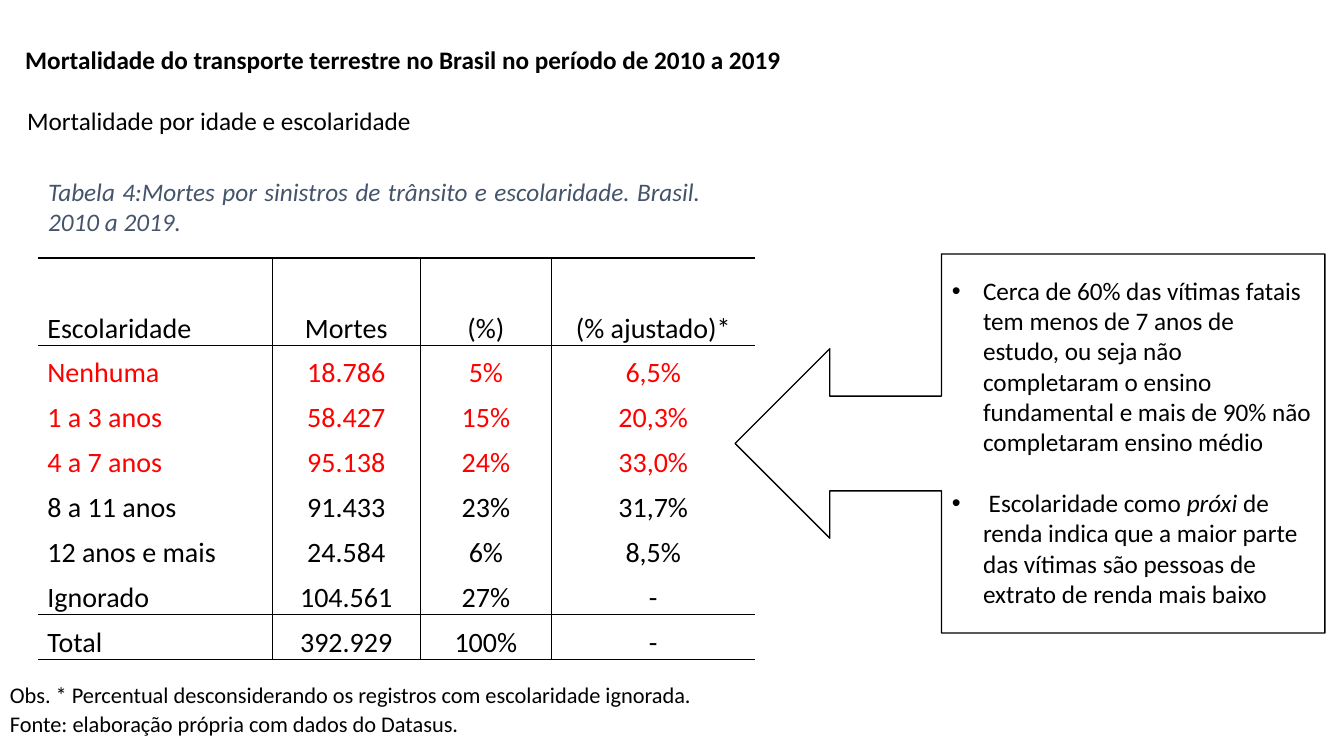
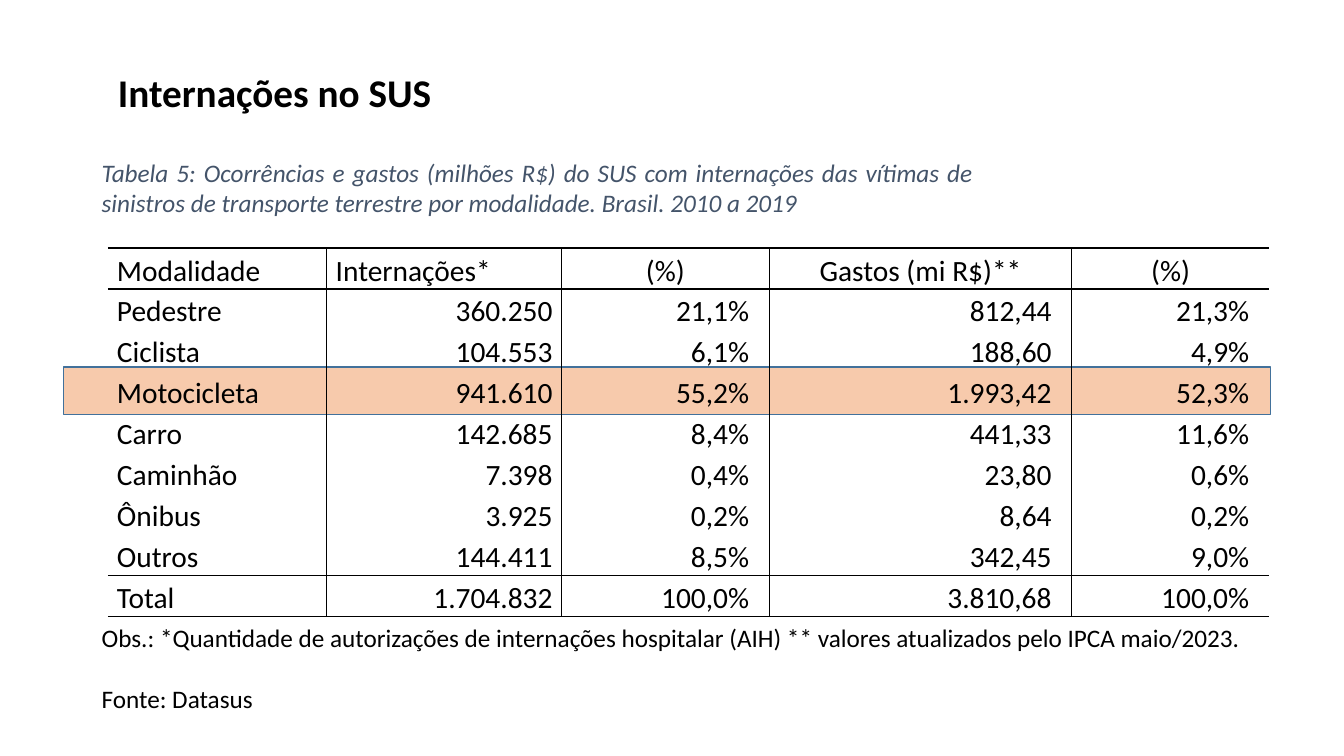
from dataclasses import dataclass

from lxml import etree
from pptx import Presentation
from pptx.dml.color import RGBColor as RGB
from pptx.enum.shapes import MSO_SHAPE as SHAPE
from pptx.enum.text import MSO_ANCHOR as ANCHOR, MSO_AUTO_SIZE as AUTO, PP_ALIGN as ALIGN
from pptx.oxml.ns import qn
from pptx.util import Inches, Pt


@dataclass(frozen=True)
class Theme:
    font: str = "Calibri"
    black: RGB = RGB(0x00, 0x00, 0x00)
    red: RGB = RGB(0xFF, 0x00, 0x00)
    slate: RGB = RGB(0x44, 0x54, 0x6A)
    peach: RGB = RGB(0xF7, 0xCA, 0xAC)
    blue: RGB = RGB(0x42, 0x71, 0x9B)
    title: int = 28
    body: int = 18
    note: int = 16
    line: int = 1
    loose: float = 1.07
    plain: str = "{2D5ABB26-0587-4C30-8999-92F81FD0307C}"


T = Theme()
LEFT, MID, RIGHT, JUST = ALIGN.LEFT, ALIGN.CENTER, ALIGN.RIGHT, ALIGN.JUSTIFY


def put(frame, lines, size=T.body, color=T.black, align=LEFT, space=1.0, gap=0):
    """Fill a frame; each line is a list of (text, style), where style holds b or i."""
    frame.word_wrap = True
    for i, runs in enumerate(lines):
        para = frame.paragraphs[0] if i == 0 else frame.add_paragraph()
        para.alignment, para.line_spacing = align, space
        para.space_before = Pt(gap if i else 0)
        for text, style in runs:
            run = para.add_run()
            run.text = text
            font = run.font
            font.name, font.size, font.color.rgb = T.font, Pt(size), color
            font.bold, font.italic = "b" in style, "i" in style


def grid(slide, left, top, cols, tall, rows, size, head, body, pad, marks=()):
    """Add a table ruled between columns, around its head and around its total."""
    last, end = len(rows) - 1, len(cols) - 1
    frame = slide.shapes.add_table(len(rows), len(cols), Inches(left), Inches(top),
                                   Inches(sum(cols)), Inches(sum(tall)))
    table = frame.table
    table.first_row = table.horz_banding = False
    table._tbl.tblPr.find(qn("a:tableStyleId")).text = T.plain
    for col, width in zip(table.columns, cols):
        col.width = Inches(width)
    for r, row in enumerate(rows):
        table.rows[r].height = Inches(tall[r])
        for c, text in enumerate(row):
            cell = table.cell(r, c)
            cell.vertical_anchor = ANCHOR.BOTTOM
            cell.margin_top = cell.margin_bottom = 0
            cell.margin_left = Inches(0.09)
            cell.margin_right = Inches(pad[c] if r else 0.09)
            put(cell.text_frame, [[(text, "")]], size, T.red if r in marks else T.black,
                body[c] if r else head[c], T.loose)
            sides = {"L": c > 0, "R": c < end, "T": r in (0, 1, last),
                     "B": r in (0, last - 1, last)}
            props = cell._tc.get_or_add_tcPr()
            for side, ruled in sides.items():
                edge = etree.SubElement(props, qn("a:ln" + side), w=str(Pt(T.line)))
                if ruled:
                    fill = etree.SubElement(edge, qn("a:solidFill"))
                    etree.SubElement(fill, qn("a:srgbClr"), val=str(T.black))
                else:
                    etree.SubElement(edge, qn("a:noFill"))
            cell.fill.background()


deck = Presentation()
deck.slide_width, deck.slide_height = Inches(13.33), Inches(7.5)
school = deck.slides.add_slide(deck.slide_layouts[1])
care = deck.slides.add_slide(deck.slide_layouts[5])

# Titles
for slide, box, text, size in (
    (school, (0.15, 0.39, 7.89, 0.43),
     "Mortalidade do transporte terrestre no Brasil no período de 2010 a 2019", T.body),
    (care, (1.07, 0.63, 3.4, 0.57), "Internações no SUS", T.title),
):
    title = slide.shapes.title
    title.left, title.top, title.width, title.height = map(Inches, box)
    title.text_frame.auto_size = AUTO.NONE
    title.text_frame.vertical_anchor = ANCHOR.TOP
    put(title.text_frame, [[(text, "b")]], size)

# Deaths by schooling
grid(school, 0.38, 2.56, (2.32, 1.47, 1.3, 2.02), [0.87] + [0.445] * 7, (
    ("Escolaridade", "Mortes", "(%)", "(% ajustado)*"),
    ("Nenhuma", "18.786", "5%", "6,5%"),
    ("1 a 3 anos", "58.427", "15%", "20,3%"),
    ("4 a 7 anos", "95.138", "24%", "33,0%"),
    ("8 a 11 anos", "91.433", "23%", "31,7%"),
    ("12 anos e mais", "24.584", "6%", "8,5%"),
    ("Ignorado", "104.561", "27%", "-"),
    ("Total", "392.929", "100%", "-"),
), 20, (JUST, MID, MID, MID), (JUST, MID, MID, MID), (0.09,) * 4, marks=(1, 2, 3))

call = school.shapes.add_shape(SHAPE.LEFT_ARROW_CALLOUT, Inches(7.29), Inches(2.52),
                               Inches(5.85), Inches(3.76))
for i, ratio in enumerate((0.25, 0.25, 0.25, 0.65)):
    call.adjustments[i] = ratio
call.shadow.inherit = False
call.fill.background()
call.line.color.rgb, call.line.width = T.black, Pt(T.line)

points = school.placeholders[1]
points.left, points.top, points.width, points.height = map(Inches, (9.34, 2.68, 3.8, 3.43))
points.text_frame.auto_size = AUTO.NONE
put(points.text_frame, [
    [("Cerca de 60% das vítimas fatais tem menos de 7 anos de estudo, ou seja não "
      "completaram o ensino fundamental e mais de 90% não completaram ensino médio", "")],
    [(" Escolaridade como ", ""), ("próxi", "i"),
     (" de renda indica que a maior parte das vítimas são pessoas de extrato de renda "
      "mais baixo", "")],
], gap=22)
for para in points.text_frame.paragraphs:
    props = para._p.get_or_add_pPr()
    props.set("marL", str(Inches(0.31)))
    props.set("indent", str(-Inches(0.31)))

# Hospital stays by mode, with the motorcycle row marked behind the table
band = care.shapes.add_shape(SHAPE.RECTANGLE, Inches(0.63), Inches(3.64),
                             Inches(11.97), Inches(0.47))
band.shadow.inherit = False
band.fill.solid()
band.fill.fore_color.rgb = T.peach
band.line.color.rgb, band.line.width = T.blue, Pt(T.line)

grid(care, 1.07, 2.46, (2.17, 2.33, 2.06, 3.0, 1.96), [3.66 / 9] * 9, (
    ("Modalidade", "Internações*", "(%)", "Gastos (mi R$)**", "(%)"),
    ("Pedestre", "360.250", "21,1%", "812,44", "21,3%"),
    ("Ciclista", "104.553", "6,1%", "188,60", "4,9%"),
    ("Motocicleta", "941.610", "55,2%", "1.993,42", "52,3%"),
    ("Carro", "142.685", "8,4%", "441,33", "11,6%"),
    ("Caminhão", "7.398", "0,4%", "23,80", "0,6%"),
    ("Ônibus", "3.925", "0,2%", "8,64", "0,2%"),
    ("Outros", "144.411", "8,5%", "342,45", "9,0%"),
    ("Total", "1.704.832", "100,0%", "3.810,68", "100,0%"),
), 21, (JUST, JUST, MID, MID, MID), (JUST,) + (RIGHT,) * 4, (0.09, 0.09, 0.2, 0.2, 0.2))

# Subtitle, captions and notes
for slide, box, lines, style, size, color, align, space, gap in (
    (school, (0.17, 0.97, 4.06, 0.41), ["Mortalidade por idade e escolaridade"],
     "", T.body, T.black, JUST, T.loose, 0),
    (school, (0.38, 1.7, 6.67, 0.71),
     ["Tabela 4:Mortes por sinistros de trânsito e escolaridade. Brasil. 2010 a 2019."],
     "i", T.body, T.slate, JUST, 1.0, 0),
    (school, (0, 6.69, 8.63, 0.66),
     ["Obs. * Percentual desconsiderando os registros com escolaridade ignorada.",
      "Fonte: elaboração própria com dados do Datasus."],
     "", T.note, T.black, LEFT, T.loose, 0),
    (care, (0.91, 1.51, 8.84, 0.71),
     ["Tabela 5: Ocorrências e gastos (milhões R$) do SUS com internações das vítimas de "
      "sinistros de transporte terrestre por modalidade. Brasil. 2010 a 2019"],
     "i", T.body, T.slate, JUST, 1.0, 0),
    (care, (0.91, 6.12, 11.6, 1.01),
     ["Obs.: *Quantidade de autorizações de internações hospitalar (AIH) ** valores "
      "atualizados pelo IPCA maio/2023.", "Fonte: Datasus"],
     "", T.body, T.black, LEFT, 1.0, 22),
):
    text = slide.shapes.add_textbox(*map(Inches, box)).text_frame
    put(text, [[(line, style)] for line in lines], size, color, align, space, gap)

deck.save("out.pptx")
